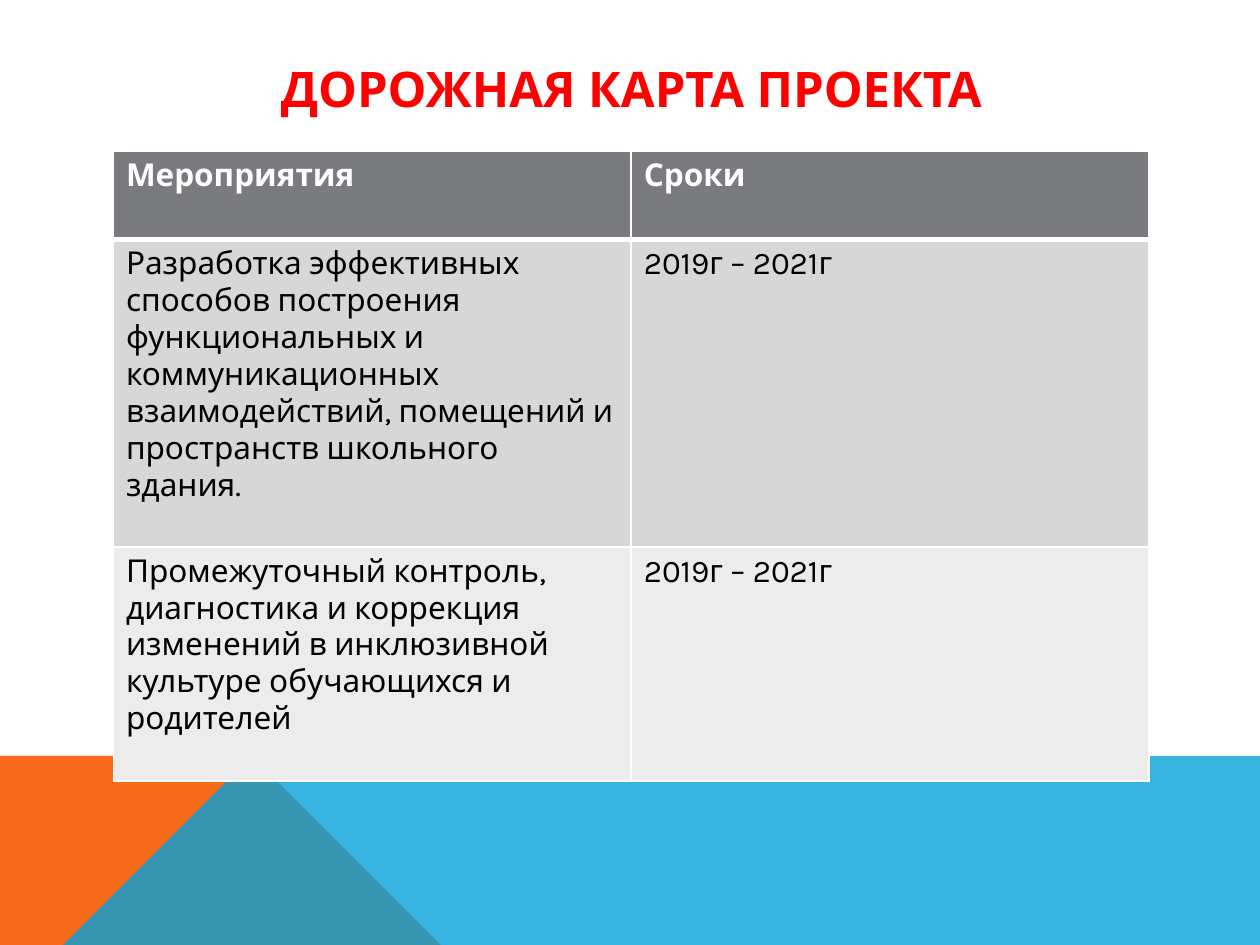
import pptx
import pptx.util
import pptx.dml.color
import pptx.enum.text
import pptx.oxml.ns
from lxml import etree

TITLE = "ДОРОЖНАЯ КАРТА ПРОЕКТА"
PERIOD = "2019г – 2021г"
ROWS = [
    ("Мероприятия", "Сроки"),
    ("Разработка эффективных способов построения функциональных и "
     "коммуникационных взаимодействий, помещений и пространств школьного "
     "здания.", PERIOD),
    ("Промежуточный контроль, диагностика и коррекция изменений в "
     "инклюзивной культуре обучающихся и родителей", PERIOD),
]
THEME = {
    "font": "Karla", "title_size": 28, "body_size": 18,
    "title": "FF0000", "head_text": "FFFFFF", "text": "000000",
    "border": "FFFFFF", "row_fills": ("797B7E", "D7D7D8", "ECECEC"),
    "orange": "F96A1B", "blue": "08A1D9", "blue_alpha": 80,
}

# Layout in inches
W, H = 10, 7.5
LEFT, TABLE_W = 0.9, 8.22
TABLE_TOP, ROW_HEIGHTS = 1.2, (0.7, 2.44, 1.86)
BAND_TOP, PEAK_X, FOOT_X = 5.52, 2.23, 3.91

Inches, Pt = pptx.util.Inches, pptx.util.Pt
qn = pptx.oxml.ns.qn


def rgb(value):
    return pptx.dml.color.RGBColor.from_string(value)


def set_font(p, size, color, bold):
    p.font.name = THEME["font"]
    p.font.size = Pt(size)
    p.font.color.rgb = rgb(color)
    p.font.bold = bold


def add_polygon(shapes, points, color, alpha=100):
    builder = shapes.build_freeform(*points[0], scale=Inches(1))
    builder.add_line_segments(points[1:], close=True)
    sp = builder.convert_to_shape()
    sp.shadow.inherit = False
    sp.line.fill.background()
    sp.fill.solid()
    sp.fill.fore_color.rgb = rgb(color)
    if alpha < 100:
        clr = sp._element.spPr.find(qn("a:solidFill"))[0]
        etree.SubElement(clr, qn("a:alpha"), val=str(alpha * 1000))


def set_borders(cell, widths):
    tc_pr = cell._tc.get_or_add_tcPr()
    for side, width in zip("LRTB", widths):
        ln = etree.SubElement(tc_pr, qn(f"a:ln{side}"), w=str(Pt(width)))
        fill = etree.SubElement(ln, qn("a:solidFill"))
        etree.SubElement(fill, qn("a:srgbClr"), val=THEME["border"])


def main():
    prs = pptx.Presentation()
    prs.slide_width, prs.slide_height = Inches(W), Inches(H)
    s = prs.slides.add_slide(prs.slide_layouts[6])

    # Bottom band
    add_polygon(s.shapes, [(0, H), (0, BAND_TOP), (PEAK_X, BAND_TOP),
                           (FOOT_X, H)], THEME["orange"])
    add_polygon(s.shapes, [(0, H), (PEAK_X, BAND_TOP), (W, BAND_TOP), (W, H)],
                THEME["blue"], THEME["blue_alpha"])

    # Title
    box = s.shapes.add_textbox(Inches(LEFT), Inches(0.4),
                               Inches(TABLE_W), Inches(0.6))
    tf = box.text_frame
    tf.word_wrap = True
    tf.vertical_anchor = pptx.enum.text.MSO_ANCHOR.MIDDLE
    p = tf.paragraphs[0]
    p.text = TITLE
    p.alignment = pptx.enum.text.PP_ALIGN.CENTER
    set_font(p, THEME["title_size"], THEME["title"], True)

    # Roadmap table
    table = s.shapes.add_table(len(ROWS), len(ROWS[0]), Inches(LEFT),
                               Inches(TABLE_TOP), Inches(TABLE_W),
                               Inches(sum(ROW_HEIGHTS))).table
    for i, texts in enumerate(ROWS):
        table.rows[i].height = Inches(ROW_HEIGHTS[i])
        head = i == 0
        for j, text in enumerate(texts):
            cell = table.cell(i, j)
            # The rule under the header is heavier
            set_borders(cell, (1, 1, 3 if i == 1 else 1, 3 if head else 1))
            cell.fill.solid()
            cell.fill.fore_color.rgb = rgb(THEME["row_fills"][i])
            p = cell.text_frame.paragraphs[0]
            p.text = text
            set_font(p, THEME["body_size"],
                     THEME["head_text" if head else "text"], head)

    prs.save("out.pptx")


if __name__ == "__main__":
    main()
